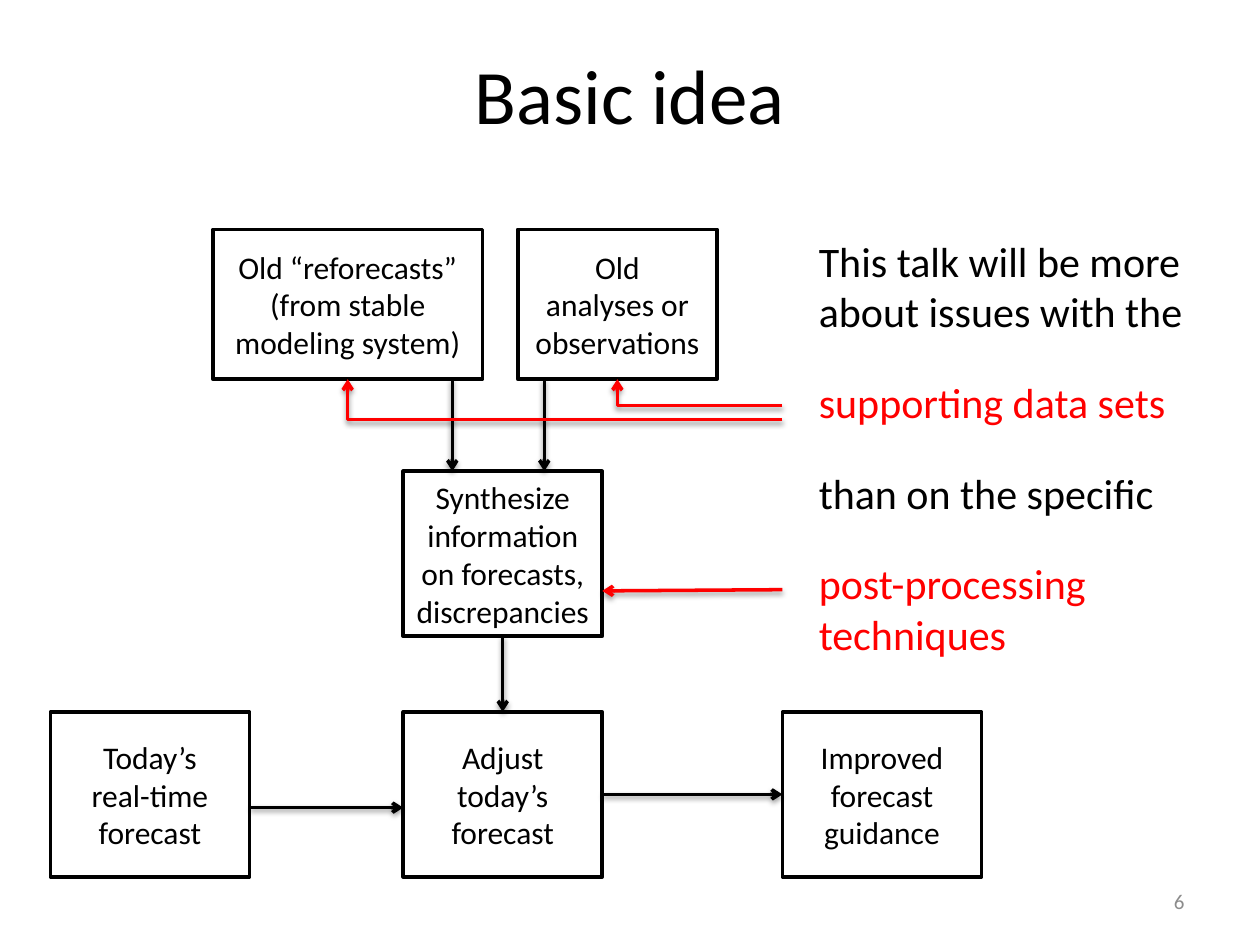
from dataclasses import dataclass
from typing import Optional

import pptx
import pptx.dml.color
import pptx.enum.shapes
import pptx.enum.text
import pptx.oxml
import pptx.oxml.ns
import pptx.util
from pptx.util import Inches

COLORS = {"black": "000000", "white": "FFFFFF", "red": "FF0000", "gray": "8C8C8C"}
FONT = "Calibri"
ALIGN = pptx.enum.text.PP_ALIGN
MIDDLE = pptx.enum.text.MSO_ANCHOR.MIDDLE
CONNECTOR = pptx.enum.shapes.MSO_CONNECTOR
TOP, LEFT, BOTTOM, RIGHT = range(4)

BOX_W = 1.58
SOURCE_Y, SOURCE_H = 1.82, 1.19
STEP_H = 1.31
SYNTH_Y, BOTTOM_Y = 3.74, 5.65
MIDDLE_X, RIGHT_X = 3.2, 6.21
SOURCE_END = SOURCE_Y + SOURCE_H

SHADOW = (
    f'<a:effectLst {pptx.oxml.ns.nsdecls("a")}>'
    '<a:outerShdw blurRad="39370" dist="20320" dir="5400000" rotWithShape="0">'
    '<a:srgbClr val="000000"><a:alpha val="38000"/></a:srgbClr>'
    '</a:outerShdw></a:effectLst>'
)
ARROWHEAD = f'<a:tailEnd {pptx.oxml.ns.nsdecls("a")} type="arrow"/>'


@dataclass
class Box:
    name: str
    x: float
    y: float
    w: float
    h: float
    lines: list[str]


@dataclass
class Arrow:
    start: tuple[float, float]
    end: tuple[float, float]
    color: str = "black"
    bent: bool = False
    begin_at: Optional[tuple[str, int]] = None
    end_at: Optional[tuple[str, int]] = None


@dataclass
class Remark:
    text: str
    color: str = "black"
    gap: float = 23


BOXES = [
    Box("today", 0.4, BOTTOM_Y, BOX_W, STEP_H, ["Today’s", "real-time forecast"]),
    Box("reforecasts", 1.69, SOURCE_Y, 2.14, SOURCE_H,
        ["Old “reforecasts”", "(from stable", "modeling system)"]),
    Box("analyses", 4.11, SOURCE_Y, BOX_W, SOURCE_H,
        ["Old", "analyses or", "observations"]),
    Box("synthesize", MIDDLE_X, SYNTH_Y, BOX_W, STEP_H,
        ["Synthesize", "information", "on forecasts,", "discrepancies"]),
    Box("adjust", MIDDLE_X, BOTTOM_Y, BOX_W, STEP_H, ["Adjust", "today’s", "forecast"]),
    Box("guidance", RIGHT_X, BOTTOM_Y, BOX_W, STEP_H,
        ["Improved", "forecast", "guidance"]),
]

FLOW_ARROWS = [
    Arrow((3.59, SOURCE_END), (3.59, SYNTH_Y)),
    Arrow((4.32, SOURCE_END), (4.32, SYNTH_Y)),
    Arrow((1.99, 6.41), (MIDDLE_X, 6.41)),
    Arrow((3.99, 5.05), (3.99, BOTTOM_Y),
          begin_at=("synthesize", BOTTOM), end_at=("adjust", TOP)),
    Arrow((4.78, 6.3), (RIGHT_X, 6.3),
          begin_at=("adjust", RIGHT), end_at=("guidance", LEFT)),
]

REMARK_ARROWS = [
    Arrow((RIGHT_X, 3.22), (4.9, SOURCE_END), "red", bent=True),
    Arrow((RIGHT_X, 3.33), (2.76, SOURCE_END), "red", bent=True),
    Arrow((RIGHT_X, 4.68), (4.78, 4.69), "red"),
]

REMARKS = [
    Remark("This talk will be more about issues with the", gap=0),
    Remark("supporting data sets", "red"),
    Remark("than on the specific"),
    Remark("post-processing", "red"),
    Remark("techniques", "red", gap=0),
]


def rgb(name: str) -> pptx.dml.color.RGBColor:
    return pptx.dml.color.RGBColor.from_string(COLORS[name])


def add_line(tf, index: int, text: str, size: float, color: str, align):
    p = tf.paragraphs[0] if index == 0 else tf.add_paragraph()
    p.text = text
    p.alignment = align
    p.font.name = FONT
    p.font.size = pptx.util.Pt(size)
    p.font.color.rgb = rgb(color)
    return p


def add_box(slide, box: Box):
    sp = slide.shapes.add_shape(
        pptx.enum.shapes.MSO_SHAPE.RECTANGLE,
        Inches(box.x), Inches(box.y), Inches(box.w), Inches(box.h))
    sp.shadow.inherit = False
    sp.fill.solid()
    sp.fill.fore_color.rgb = rgb("white")
    sp.line.color.rgb = rgb("black")
    sp.line.width = pptx.util.Pt(2)
    tf = sp.text_frame
    tf.word_wrap = True
    tf.vertical_anchor = MIDDLE
    for i, line in enumerate(box.lines):
        add_line(tf, i, line, 18, "black", ALIGN.CENTER)
    return sp


def add_arrow(slide, arrow: Arrow, boxes: dict) -> None:
    kind = CONNECTOR.ELBOW if arrow.bent else CONNECTOR.STRAIGHT
    cx = slide.shapes.add_connector(
        kind, *(Inches(v) for v in arrow.start + arrow.end))
    if arrow.begin_at:
        name, side = arrow.begin_at
        cx.begin_connect(boxes[name], side)
    if arrow.end_at:
        name, side = arrow.end_at
        cx.end_connect(boxes[name], side)
    cx.line.color.rgb = rgb(arrow.color)
    cx.line.width = pptx.util.Pt(2)
    props = cx._element.spPr
    if arrow.bent:
        props.find(pptx.oxml.ns.qn("a:prstGeom")).set("prst", "bentConnector2")
    props.find(pptx.oxml.ns.qn("a:ln")).append(pptx.oxml.parse_xml(ARROWHEAD))
    props.append(pptx.oxml.parse_xml(SHADOW))


def add_text_frame(slide, x: float, y: float, w: float, h: float):
    tf = slide.shapes.add_textbox(Inches(x), Inches(y), Inches(w), Inches(h)).text_frame
    tf.word_wrap = True
    return tf


def main() -> None:
    prs = pptx.Presentation()
    prs.slide_width, prs.slide_height = Inches(10), Inches(7.5)
    slide = prs.slides.add_slide(prs.slide_layouts[5])

    title = slide.shapes.title
    title.left, title.top = Inches(0.5), Inches(0.3)
    title.width, title.height = Inches(9), Inches(0.88)
    title.text_frame.vertical_anchor = MIDDLE
    add_line(title.text_frame, 0, "Basic idea", 44, "black", ALIGN.CENTER)

    boxes = {box.name: add_box(slide, box) for box in BOXES}
    for arrow in FLOW_ARROWS:
        add_arrow(slide, arrow, boxes)

    tf = add_text_frame(slide, 7.17, 6.95, 2.33, 0.4)
    tf.vertical_anchor = MIDDLE
    add_line(tf, 0, "6", 12, "gray", ALIGN.RIGHT)

    tf = add_text_frame(slide, 6.4, SOURCE_Y, 3.46, 3.55)
    for i, remark in enumerate(REMARKS):
        p = add_line(tf, i, remark.text, 24, remark.color, ALIGN.LEFT)
        p.space_before = pptx.util.Pt(remark.gap)

    for arrow in REMARK_ARROWS:
        add_arrow(slide, arrow, boxes)

    prs.save("out.pptx")


if __name__ == "__main__":
    main()
